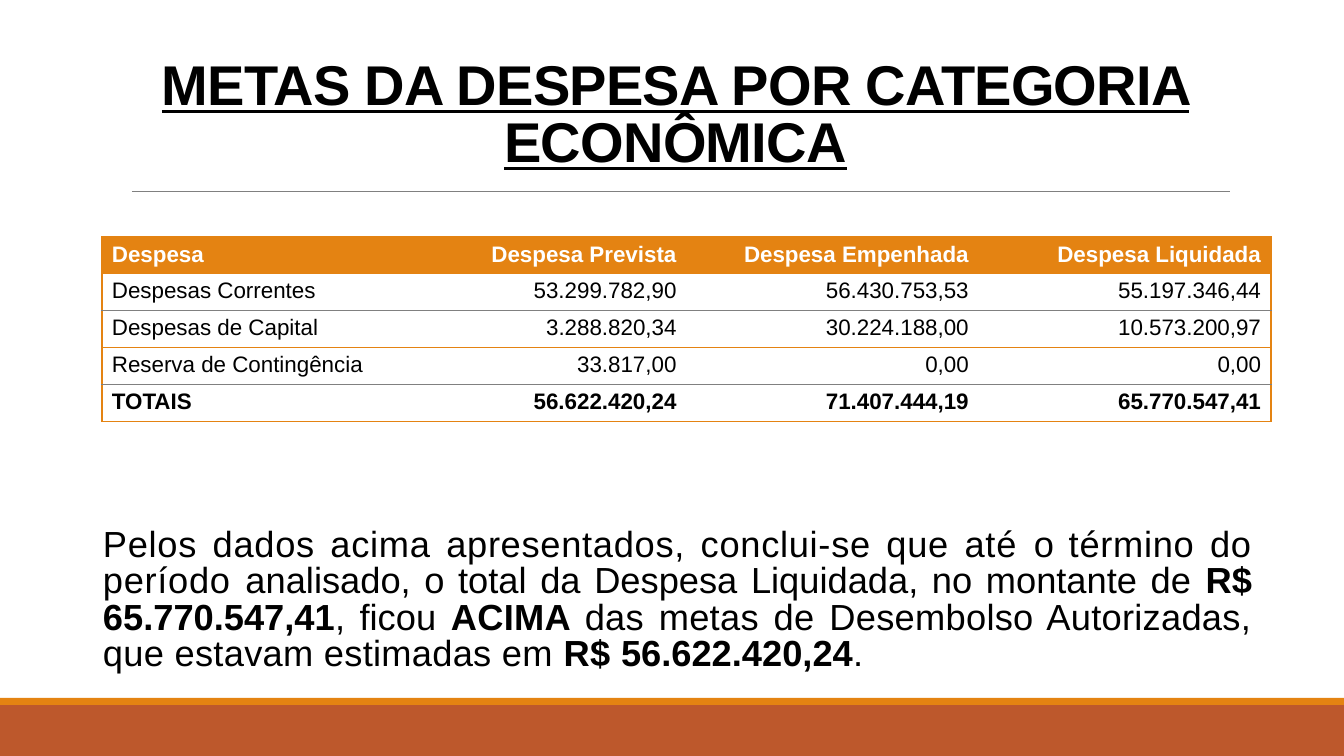
from lxml import etree
from pptx import Presentation
from pptx.dml.color import RGBColor
from pptx.enum.shapes import MSO_CONNECTOR, MSO_SHAPE
from pptx.enum.text import MSO_ANCHOR, PP_ALIGN
from pptx.oxml.ns import qn
from pptx.util import Pt

PX = 914400 / 100.8
WIDTH, HEIGHT = 1344, 756
FONT = "Arial"
BLACK = RGBColor(0x00, 0x00, 0x00)
WHITE = RGBColor(0xFF, 0xFF, 0xFF)
GREY = RGBColor(0x80, 0x80, 0x80)
ORANGE = RGBColor(0xE4, 0x83, 0x12)
RUST = RGBColor(0xBD, 0x58, 0x2C)

EXPENSES = [
    ("Despesa", "Despesa Prevista", "Despesa Empenhada", "Despesa Liquidada"),
    ("Despesas Correntes", "53.299.782,90", "56.430.753,53", "55.197.346,44"),
    ("Despesas de Capital", "3.288.820,34", "30.224.188,00", "10.573.200,97"),
    ("Reserva de Contingência", "33.817,00", "0,00", "0,00"),
    ("TOTAIS", "56.622.420,24", "71.407.444,19", "65.770.547,41"),
]
CONCLUSION = [
    ("Pelos dados acima apresentados, conclui-se que até ", False, 0.5),
    ("o ", False, 0),
    ("término do período ", False, 0.5),
    ("analisado, o total da Despesa Liquidada, no montante de ", False, 0),
    ("R$ 65.770.547,41", True, 0),
    (", ficou ", False, 0),
    ("ACIMA ", True, 0.2),
    ("das metas de Desembolso Autorizadas, que estavam estimadas em ", False, 0.2),
    ("R$ ", True, 0.2),
    ("56.622.420,24", True, 0),
    (".", False, 0),
]


def px(*lengths):
    return [round(n * PX) for n in lengths]


def add_run(p, text, size, color=BLACK, bold=False, underline=False, spacing=0):
    r = p.add_run()
    r.text = text
    r.font.name = FONT
    r.font.size = Pt(size)
    r.font.bold = bold
    r.font.underline = underline
    r.font.color.rgb = color
    if spacing:
        r._r.get_or_add_rPr().set("spc", str(round(spacing * 100)))


def add_text_frame(s, box, anchor, side_inset):
    tf = s.shapes.add_textbox(*px(*box)).text_frame
    tf.word_wrap = True
    tf.vertical_anchor = anchor
    tf.margin_left = tf.margin_right = px(side_inset)[0]
    tf.margin_top = tf.margin_bottom = px(5)[0]
    return tf


def add_bar(s, box, color):
    sp = s.shapes.add_shape(MSO_SHAPE.RECTANGLE, *px(*box))
    sp.shadow.inherit = False
    sp.fill.solid()
    sp.fill.fore_color.rgb = color
    sp.line.fill.background()


def add_footer(s, x, y, w, h):
    stripe = 7
    add_bar(s, (x, y + stripe, w, h - stripe), RUST)
    add_bar(s, (x, y, w, stripe), ORANGE)


def add_title(s, x, y, w, h):
    rule_y = y + h + 12
    line = s.shapes.add_connector(
        MSO_CONNECTOR.STRAIGHT, *px(x + 11, rule_y, x + w, rule_y))
    line.line.color.rgb = GREY
    line.line.width = Pt(0.5)
    etree.SubElement(line._element.spPr, qn("a:effectLst"))
    p = add_text_frame(s, (x, y, w, h), MSO_ANCHOR.BOTTOM, 10).paragraphs[0]
    p.alignment = PP_ALIGN.CENTER
    p.line_spacing = 0.85
    add_run(p, "METAS DA DESPESA POR CATEGORIA ECONÔMICA", 40,
            bold=True, underline=True, spacing=-0.5)


def set_borders(cell, **sides):
    tcPr = cell._tc.get_or_add_tcPr()
    for at, tag in enumerate(("lnL", "lnR", "lnT", "lnB")):
        color, width = sides.get(tag, (None, 0))
        ln = etree.Element(qn(f"a:{tag}"), w=str(Pt(width)))
        if color is None:
            etree.SubElement(ln, qn("a:noFill"))
        else:
            fill = etree.SubElement(ln, qn("a:solidFill"))
            etree.SubElement(fill, qn("a:srgbClr"), val=str(color))
        tcPr.insert(at, ln)


def add_expense_table(s, x, y, w, h):
    rows, cols = len(EXPENSES), len(EXPENSES[0])
    table = s.shapes.add_table(rows, cols, *px(x, y, w, h)).table
    outer, inner = (ORANGE, 1), (GREY, 0.5)
    rules = [outer, outer, inner, outer, inner, outer]
    for col in table.columns:
        col.width = px(w / cols)[0]
    for i, values in enumerate(EXPENSES):
        table.rows[i].height = px(h / rows)[0]
        header = i == 0
        for j, value in enumerate(values):
            cell = table.cell(i, j)
            cell.margin_left = cell.margin_right = px(10)[0]
            cell.margin_top = cell.margin_bottom = px(5)[0]
            if header:
                cell.fill.solid()
                cell.fill.fore_color.rgb = ORANGE
            else:
                cell.fill.background()
            p = cell.text_frame.paragraphs[0]
            p.alignment = PP_ALIGN.RIGHT if j else PP_ALIGN.LEFT
            add_run(p, value, 16, color=WHITE if header else BLACK,
                    bold=header or i == rows - 1)
            sides = {"lnT": rules[i], "lnB": rules[i + 1]}
            if j == 0:
                sides["lnL"] = outer
            if j == cols - 1:
                sides["lnR"] = outer
            set_borders(cell, **sides)


def add_conclusion(s, x, y, w, h):
    p = add_text_frame(s, (x, y, w, h), MSO_ANCHOR.TOP, 0).paragraphs[0]
    p.alignment = PP_ALIGN.JUSTIFY
    p.line_spacing = 0.84
    p._p.get_or_add_pPr().set("marL", str(px(10)[0]))
    for text, bold, spacing in CONCLUSION:
        add_run(p, text, 25.9, bold=bold, spacing=spacing)


def main():
    prs = Presentation()
    prs.slide_width, prs.slide_height = px(WIDTH, HEIGHT)
    s = prs.slides.add_slide(prs.slide_layouts[6])
    add_footer(s, 0, 698, WIDTH, 58)
    add_title(s, 121, 31, 1109, 148)
    add_conclusion(s, 93, 523, 1159, 157)
    add_expense_table(s, 102, 237, 1169, 175)
    prs.save("out.pptx")


if __name__ == "__main__":
    main()
